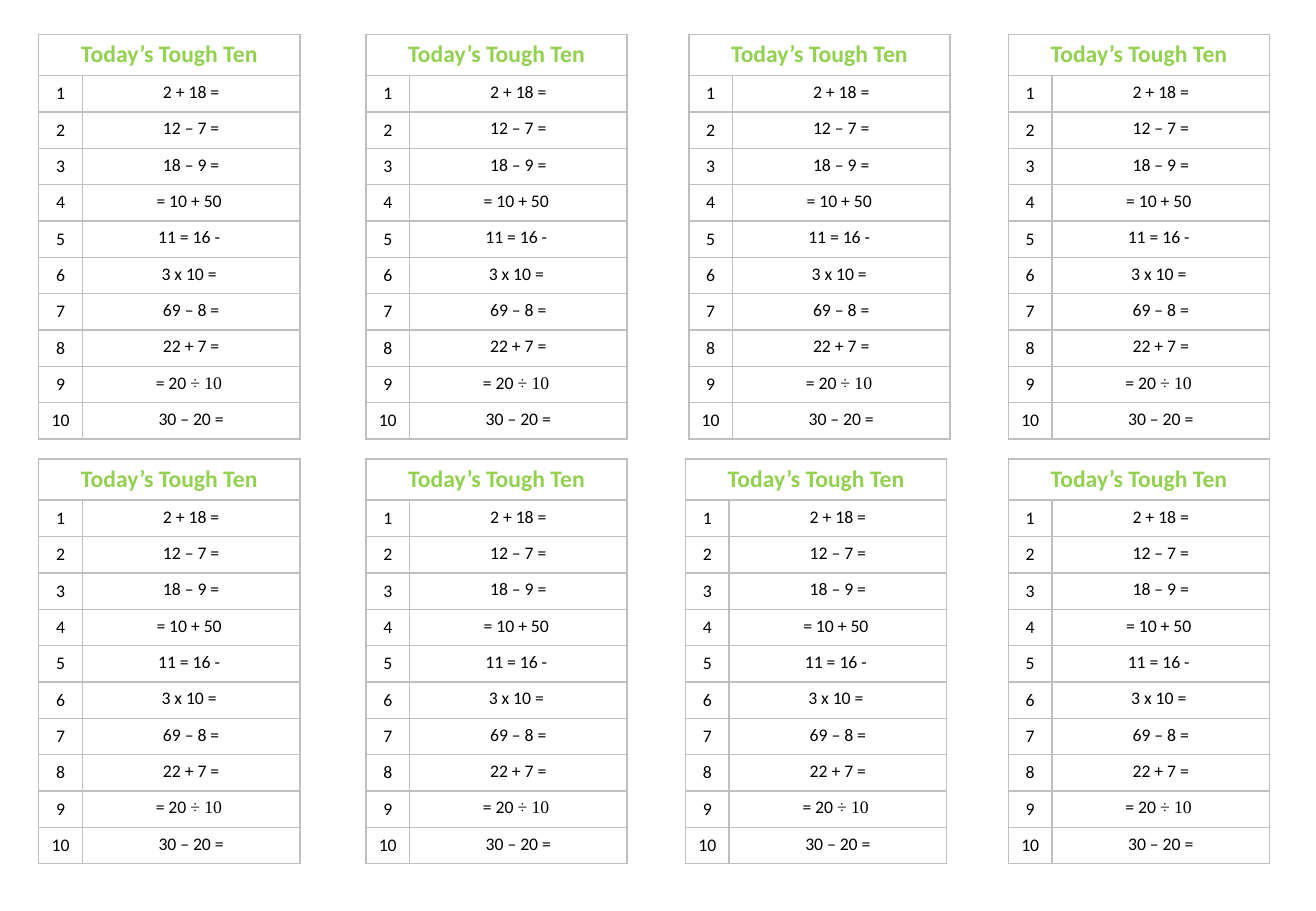
from lxml.etree import SubElement
from pptx import Presentation
from pptx.dml.color import RGBColor
from pptx.enum.text import MSO_ANCHOR, PP_ALIGN
from pptx.oxml.ns import qn
from pptx.util import Cm, Pt

COLORS = {"title": "92D050", "text": "000000", "border": "BFBFBF"}
FONT = "Calibri"
DIVISION_FONT = "Times New Roman"

TITLE = "Today’s Tough Ten"
# Each question is a list of spans; a second span is set in the division font
QUESTIONS = [
    ["2 + 18 ="], ["12 – 7 ="], ["18 – 9 ="], ["= 10 + 50 "], ["11 = 16 - "],
    ["3 x 10 = "], ["69 – 8 ="], ["22 + 7 ="], ["= 20 ", "÷ 10 "], ["30 – 20 ="],
]

# Card positions and sizes in centimetres
CARD_ROWS = [
    (0.72, [0.81, 7.65, 14.4, 21.08]),
    (9.6, [0.81, 7.65, 14.33, 21.08]),
]
NUMBER_WIDTH, QUESTION_WIDTH = 0.91, 4.55
TITLE_HEIGHT, QUESTION_HEIGHT = 0.86, 0.76


def add_borders(cell):
    properties = cell._tc.get_or_add_tcPr()
    for side in ("a:lnL", "a:lnR", "a:lnT", "a:lnB"):
        line = SubElement(properties, qn(side), w=str(Pt(1)))
        fill = SubElement(line, qn("a:solidFill"))
        SubElement(fill, qn("a:srgbClr"), val=COLORS["border"])


def fill_cell(cell, spans, size=10.5, color="text", bold=False,
              anchor=MSO_ANCHOR.TOP):
    para = cell.text_frame.paragraphs[0]
    para.alignment = PP_ALIGN.CENTER
    para.font.name = FONT
    para.font.size = Pt(size)
    para.font.bold = bold
    para.font.color.rgb = RGBColor.from_string(COLORS[color])
    for index, text in enumerate(spans):
        span = para.add_run()
        span.text = text
        if index:
            span.font.name = DIVISION_FONT
    cell.vertical_anchor = anchor


def add_card(page, left, top):
    """One question card: a title row above ten numbered questions."""
    width = NUMBER_WIDTH + QUESTION_WIDTH
    height = TITLE_HEIGHT + QUESTION_HEIGHT * len(QUESTIONS)
    table = page.shapes.add_table(len(QUESTIONS) + 1, 2, Cm(left), Cm(top),
                                  Cm(width), Cm(height)).table
    table.first_row = False
    table.horz_banding = False
    table.columns[0].width = Cm(NUMBER_WIDTH)
    table.columns[1].width = Cm(QUESTION_WIDTH)

    # Borders come before the fill in the cell properties
    for cell in table.iter_cells():
        add_borders(cell)
        cell.fill.background()

    # Title row
    table.rows[0].height = Cm(TITLE_HEIGHT)
    table.cell(0, 0).merge(table.cell(0, 1))
    fill_cell(table.cell(0, 0), [TITLE], size=14, color="title", bold=True)

    # Numbered questions
    for number, spans in enumerate(QUESTIONS, start=1):
        table.rows[number].height = Cm(QUESTION_HEIGHT)
        fill_cell(table.cell(number, 0), [str(number)], anchor=MSO_ANCHOR.MIDDLE)
        fill_cell(table.cell(number, 1), spans)


def main():
    deck = Presentation()
    deck.slide_width, deck.slide_height = Cm(27.51), Cm(19.05)
    page = deck.slides.add_slide(deck.slide_layouts[6])
    for top, lefts in CARD_ROWS:
        for left in lefts:
            add_card(page, left, top)
    deck.save("out.pptx")


if __name__ == "__main__":
    main()
